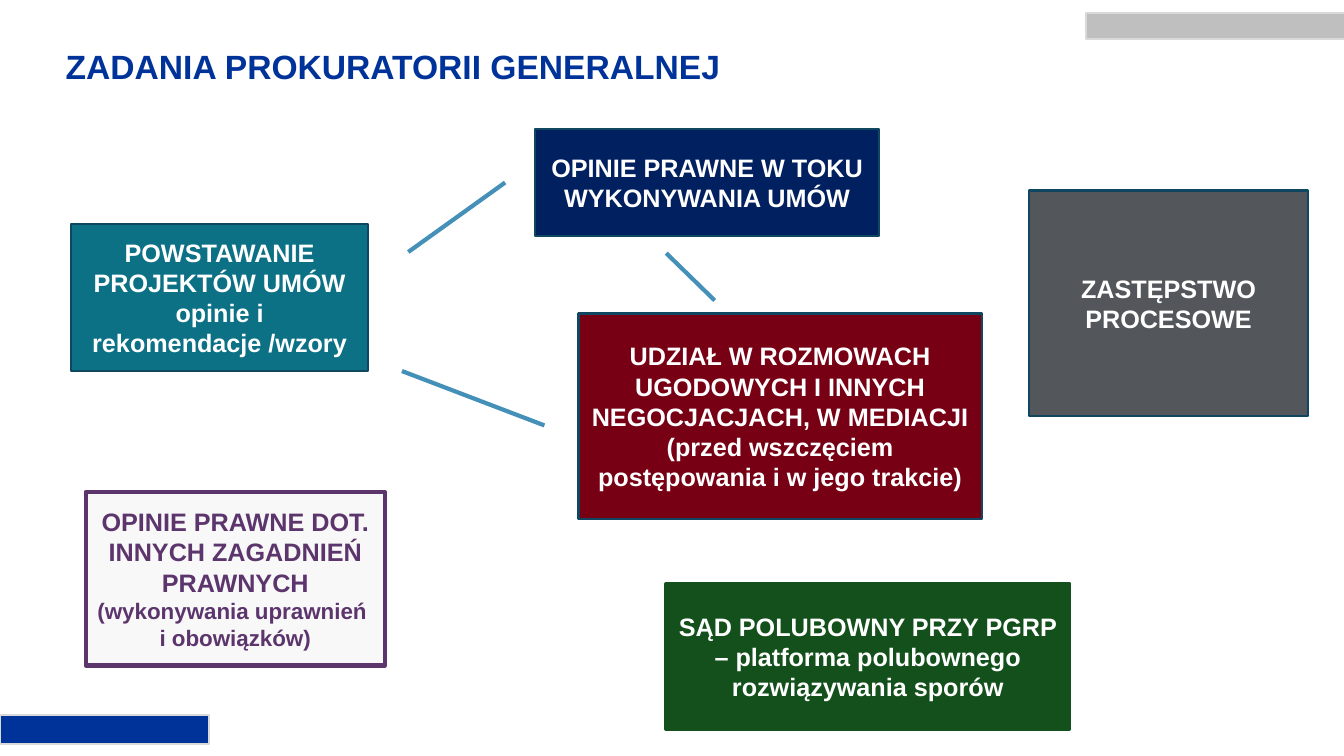
from lxml.etree import SubElement
from pptx import Presentation
from pptx.dml.color import RGBColor as RGB
from pptx.enum.shapes import MSO_CONNECTOR as LINK, MSO_SHAPE as SHAPE
from pptx.enum.text import MSO_ANCHOR as ANCHOR, PP_ALIGN as ALIGN
from pptx.oxml.ns import qn
from pptx.util import Cm, Pt

HUES = {
    "white": "FFFFFF", "blue": "00339A", "silver": "BFBFBF", "pale": "D9D9D9",
    "light": "F8F8F8", "purple": "5C356D", "teal": "0D7186", "edge": "104760",
    "navy": "002060", "red": "770014", "gray": "53565A", "green": "13501B",
    "link": "4590B8",
}


def hue(name):
    return RGB.from_string(HUES[name])


def add_box(place, fill, line, width):
    box = slide.shapes.add_shape(SHAPE.RECTANGLE, *map(Cm, place))
    box.shadow.inherit = False
    box.fill.solid()
    box.fill.fore_color.rgb = hue(fill)
    box.line.color.rgb = hue(line)
    box.line.width = Pt(width)
    return box


deck = Presentation()
deck.slide_width, deck.slide_height = Cm(33.87), Cm(19.05)
slide = deck.slides.add_slide(deck.slide_layouts[5])

# Title
title = slide.shapes.title
title.left, title.top, title.width, title.height = map(Cm, (1.4, 0.99, 29.21, 1.5))
frame = title.text_frame
frame.text = "ZADANIA PROKURATORII GENERALNEJ"
frame.vertical_anchor = ANCHOR.MIDDLE
head = frame.paragraphs[0]
head.alignment = ALIGN.LEFT
head.line_spacing = 0.9
head.font.name, head.font.size, head.font.bold = "Arial", Pt(24), True
head.font.color.rgb = hue("blue")

# Corner bars
add_box((27.36, 0.33, 6.53, 0.66), "silver", "pale", 1.5)
add_box((0, 18.01, 5.26, 0.74), "blue", "pale", 1.5)

# Tasks: place, fill, line, line width, text colour, text
tasks = [
    ((2.16, 12.4, 7.54, 4.37), "light", "purple", 3, "purple",
     "OPINIE PRAWNE DOT. INNYCH ZAGADNIEŃ PRAWNYCH\v"
     "(wykonywania uprawnień \vi obowiązków)"),
    ((1.8, 5.64, 7.47, 3.71), "teal", "edge", 1.5, "white",
     "POWSTAWANIE PROJEKTÓW UMÓW\nopinie i rekomendacje /wzory"),
    ((13.49, 3.25, 8.66, 2.69), "navy", "edge", 1.5, "white",
     "OPINIE PRAWNE W TOKU WYKONYWANIA UMÓW"),
    ((14.58, 7.9, 10.16, 5.18), "red", "edge", 1.5, "white",
     "UDZIAŁ W ROZMOWACH UGODOWYCH I INNYCH NEGOCJACJACH, W MEDIACJI\n"
     "(przed wszczęciem postępowania i w jego trakcie)"),
    ((25.93, 4.8, 7.04, 5.69), "gray", "edge", 1.5, "white",
     "ZASTĘPSTWO PROCESOWE"),
    ((16.79, 14.71, 10.16, 3.66), "green", "green", 3, "white",
     "SĄD POLUBOWNY PRZY PGRP – platforma polubownego rozwiązywania sporów"),
]
for place, fill, line, width, ink, text in tasks:
    frame = add_box(place, fill, line, width).text_frame
    frame.word_wrap = True
    frame.vertical_anchor = ANCHOR.MIDDLE
    frame.text = text
    for para in frame.paragraphs:
        para.alignment = ALIGN.CENTER
        para.font.name, para.font.size, para.font.bold = "Arial", Pt(18), True
        para.font.color.rgb = hue(ink)
        for run in para.runs[1:]:
            run.font.size = Pt(16)

# Links between tasks
for ends in [(10.29, 6.35, 12.73, 4.6), (10.13, 9.35, 13.72, 10.72),
             (18.01, 7.57, 16.79, 6.38)]:
    link = slide.shapes.add_connector(LINK.STRAIGHT, *map(Cm, ends))
    link.line.color.rgb = hue("link")
    link.line.width = Pt(3)
    SubElement(link.element.spPr, qn("a:effectLst"))

deck.save("out.pptx")
